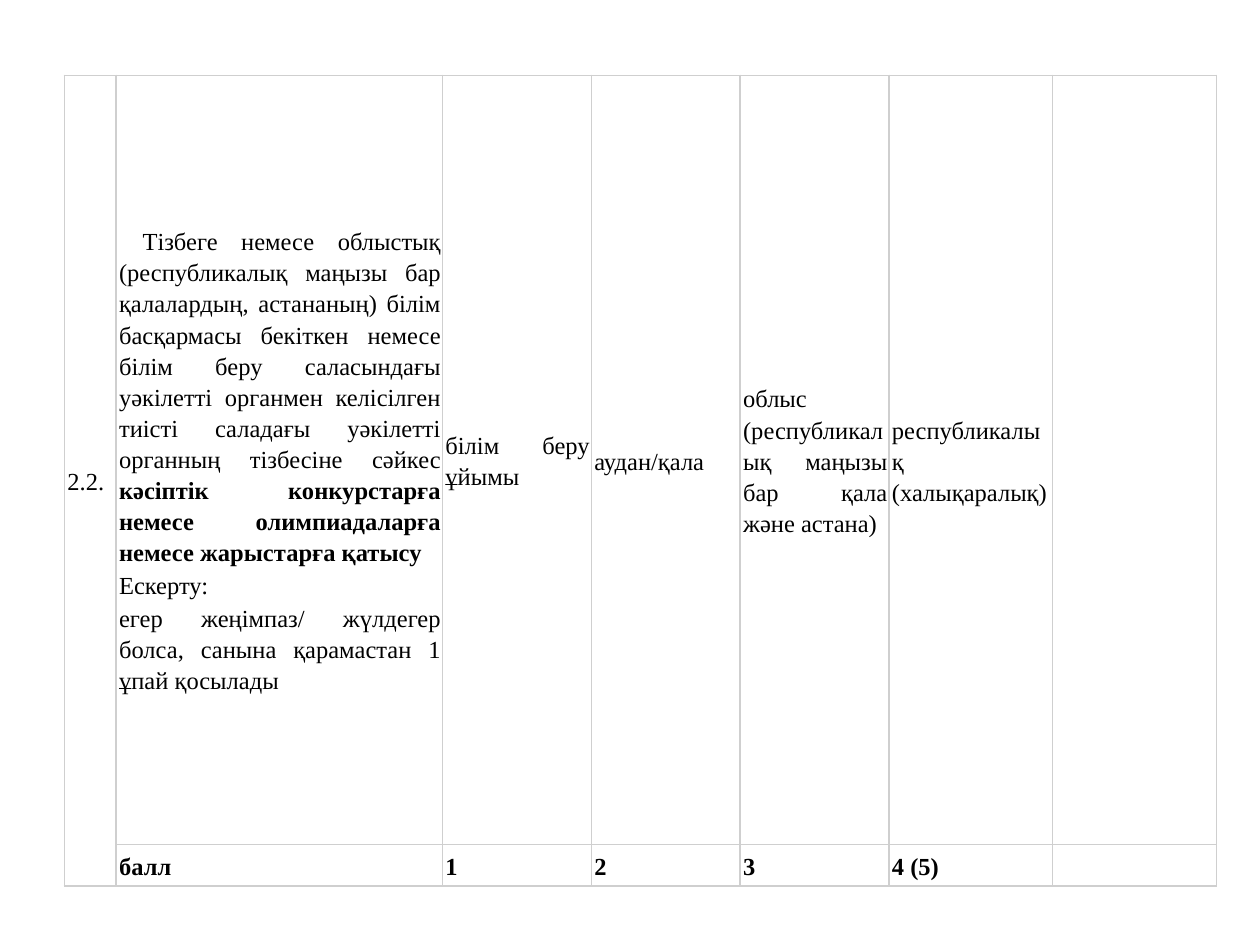
from dataclasses import dataclass

from lxml.etree import SubElement
from pptx import Presentation
from pptx.dml.color import RGBColor
from pptx.enum.text import MSO_ANCHOR as Anchor, PP_ALIGN as Align
from pptx.oxml.ns import qn
from pptx.util import Cm, Pt


@dataclass(frozen=True)
class Theme:
    font: str = "Times New Roman"
    size: int = 14
    text: str = "000000"
    border: str = "CFCFCF"
    border_width: int = 1


THEME = Theme()
INSET = Cm(0.03)
COLUMN_WIDTHS = [1.04, 6.58, 3, 3, 3, 3.3, 3.3]
ROW_HEIGHTS = [15.5, 0.73]

CRITERION = (
    " Тізбеге немесе облыстық (республикалық маңызы бар қалалардың, астананың) "
    "білім басқармасы бекіткен немесе білім беру саласындағы уәкілетті органмен "
    "келісілген тиісті саладағы уәкілетті органның тізбесіне сәйкес "
)
EVENTS = "кәсіптік конкурстарға немесе олимпиадаларға немесе жарыстарға қатысу "
NOTE = "егер жеңімпаз/ жүлдегер болса, санына қарамастан 1 ұпай қосылады"
LEVELS = [
    "білім беру ұйымы",
    "аудан/қала",
    "облыс (республикалық маңызы бар қала және астана)",
    "республикалық (халықаралық)",
]
SCORES = ["балл", "1", "2", "3", "4 (5)"]


def add_span(para, text, bold=False, size=THEME.size, color=THEME.text):
    span = para.add_run()
    span.text = text
    font = span.font
    font.name, font.size, font.bold = THEME.font, Pt(size), bold
    font.color.rgb = RGBColor.from_string(color)


def write_cell(cell, *paragraphs, bold=False):
    """Fill a cell; each paragraph is a list of (text, bold) pairs or a string."""
    frame = cell.text_frame
    for index, content in enumerate(paragraphs):
        para = frame.add_paragraph() if index else frame.paragraphs[0]
        para.alignment = Align.JUSTIFY
        para.line_spacing = 1.15
        para.space_after = Pt(1)
        para._p.get_or_add_pPr().set("marL", str(INSET))
        spans = [(content, bold)] if isinstance(content, str) else content
        for text, is_bold in spans:
            add_span(para, text, bold=is_bold)


def style_cell(cell):
    cell.vertical_anchor = Anchor.MIDDLE
    cell.margin_left = cell.margin_right = INSET
    cell.margin_top = cell.margin_bottom = INSET
    properties = cell._tc.get_or_add_tcPr()
    for side in ("lnL", "lnR", "lnT", "lnB"):
        line = SubElement(properties, qn(f"a:{side}"), w=str(Pt(THEME.border_width)))
        fill = SubElement(line, qn("a:solidFill"))
        SubElement(fill, qn("a:srgbClr"), val=THEME.border)
    cell.fill.background()


def add_grid(page, left, top):
    table = page.shapes.add_table(
        len(ROW_HEIGHTS), len(COLUMN_WIDTHS), left, top,
        Cm(sum(COLUMN_WIDTHS)), Cm(sum(ROW_HEIGHTS)),
    ).table
    table.first_row = table.horz_banding = False
    for column, width in zip(table.columns, COLUMN_WIDTHS):
        column.width = Cm(width)
    for row, height in zip(table.rows, ROW_HEIGHTS):
        row.height = Cm(height)
    for cell in table.iter_cells():
        style_cell(cell)
    table.cell(0, 0).merge(table.cell(1, 0))
    return table


def main():
    deck = Presentation()
    deck.slide_width, deck.slide_height = Cm(25.4), Cm(19.05)
    page = deck.slides.add_slide(deck.slide_layouts[6])

    table = add_grid(page, Cm(1.3), Cm(1.52))
    write_cell(table.cell(0, 0), "2.2.")
    write_cell(table.cell(0, 1), [(CRITERION, False), (EVENTS, True)], "Ескерту: ", NOTE)
    for column, level in enumerate(LEVELS, start=2):
        write_cell(table.cell(0, column), level)
    for column, score in enumerate(SCORES, start=1):
        write_cell(table.cell(1, column), score, bold=True)

    deck.save("out.pptx")


if __name__ == "__main__":
    main()
